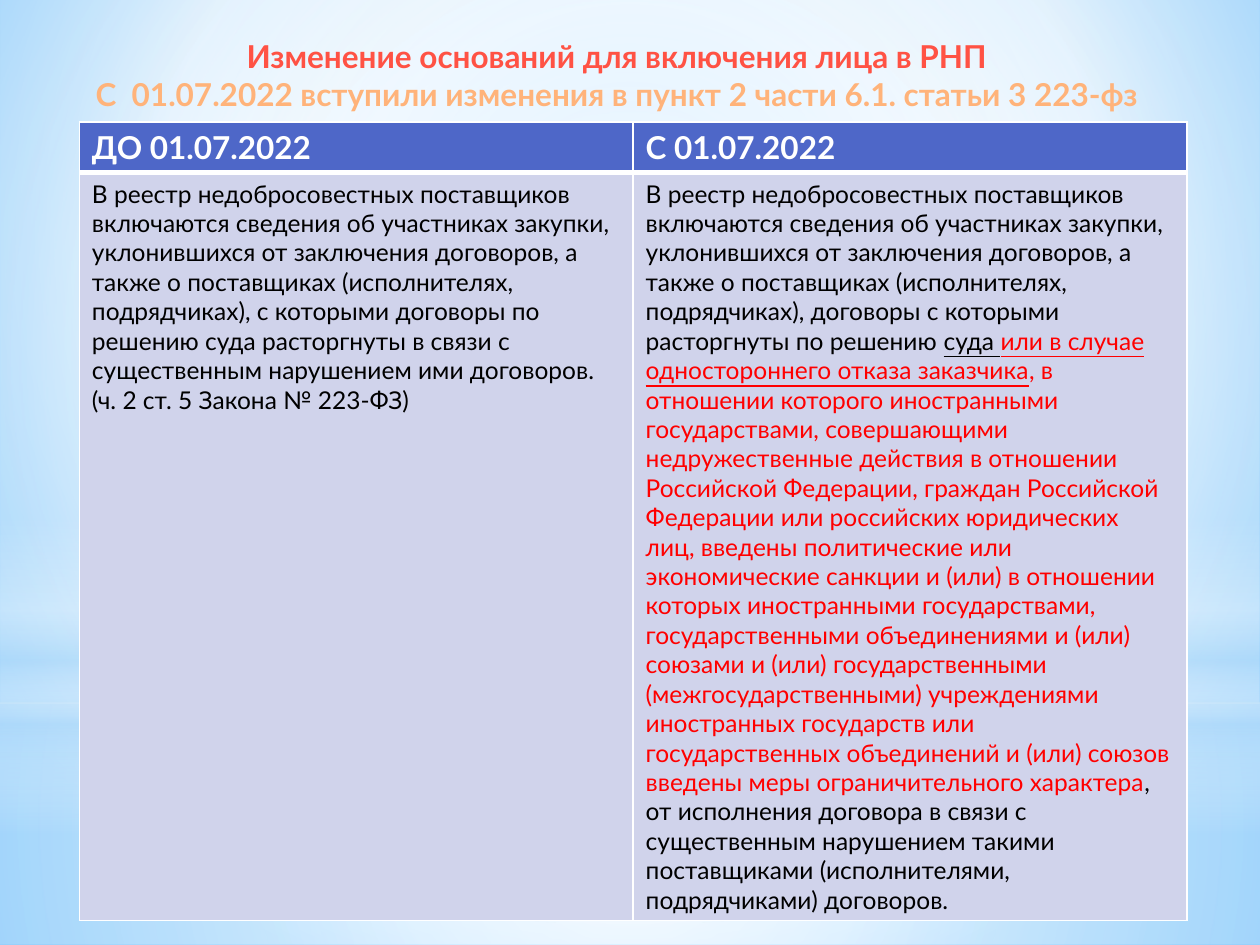
from dataclasses import dataclass

from pptx import Presentation, util as u
from pptx.dml.color import RGBColor
from pptx.enum import shapes, text
from pptx.oxml import parse_xml
from pptx.oxml.ns import nsdecls, qn

WIDTH, HEIGHT = u.Inches(10), u.Inches(7.5)
CENTRE = (50, 50, 50, 50)


@dataclass(frozen=True)
class Theme:
    """Colours and type sizes of the slide."""
    font: str = "Lato"
    heading: int = 18
    body: int = 14
    white: str = "FFFFFF"
    black: str = "000000"
    mist: str = "B4DCFA"
    header: str = "4E67C8"
    cell: str = "D0D3EB"
    change: str = "FF0000"
    subtitle: str = "FFB37A"
    title_stops: tuple = ((0, "8A1300"), (78, "FF5244"), (100, "FFF0F0"))
    sky_stops: tuple = ((0, "9ED5FF"), (60, "FFFFFF"), (100, "5BB9FF"))


THEME = Theme()

BEFORE = [(
    "В реестр недобросовестных поставщиков включаются сведения об участниках закупки, "
    "уклонившихся от заключения договоров, а также о поставщиках (исполнителях, подрядчиках), "
    "с которыми договоры по решению суда расторгнуты в связи с существенным нарушением ими "
    "договоров. (ч. 2 ст. 5 Закона № 223-ФЗ)", THEME.black, False)]
AFTER = [
    ("В реестр недобросовестных поставщиков включаются сведения об участниках закупки, "
     "уклонившихся от заключения договоров, а также о поставщиках (исполнителях, подрядчиках), "
     "договоры с которыми расторгнуты по решению ", THEME.black, False),
    ("суда ", THEME.black, True),
    ("или в случае одностороннего отказа заказчика", THEME.change, True),
    (", в отношении которого иностранными государствами, совершающими недружественные действия "
     "в отношении Российской Федерации, граждан Российской Федерации или российских юридических "
     "лиц, введены политические или экономические санкции и (или) в отношении которых "
     "иностранными государствами, государственными объединениями и (или) союзами и (или) "
     "государственными (межгосударственными) учреждениями иностранных государств или "
     "государственных объединений и (или) союзов введены меры ограничительного характера",
     THEME.change, False),
    (", от исполнения договора в связи с существенным нарушением такими поставщиками "
     "(исполнителями, подрядчиками) договоров.", THEME.black, False),
]


def area(left, top, width, height):
    """Turn percentages of the slide into a position and a size."""
    return (int(WIDTH * left / 100), int(HEIGHT * top / 100),
            int(WIDTH * width / 100), int(HEIGHT * height / 100))


def paint_gradient(owner, stops, focus=None):
    """Replace the solid fill of an element by a radial or downward gradient."""
    marks = "".join(
        f'<a:gs pos="{place * 1000}"><a:srgbClr val="{colour}">'
        f'<a:alpha val="{(opacity[0] if opacity else 100) * 1000}"/></a:srgbClr></a:gs>'
        for place, colour, *opacity in stops)
    if focus:
        edges = " ".join(f'{side}="{share * 1000}"' for side, share in zip("ltrb", focus))
        course = f'<a:path path="circle"><a:fillToRect {edges}/></a:path>'
    else:
        course = '<a:lin ang="5400000" scaled="0"/>'
    gradient = parse_xml(f'<a:gradFill {nsdecls("a")} rotWithShape="1">'
                         f'<a:gsLst>{marks}</a:gsLst>{course}</a:gradFill>')
    owner.replace(owner.find(qn("a:solidFill")), gradient)


def add_glow(slide, kind, place, stops, focus=None):
    """Add a borderless translucent layer of the sky."""
    glow = slide.shapes.add_shape(kind, *area(*place))
    glow.shadow.inherit = False
    glow.line.fill.background()
    glow.fill.solid()
    paint_gradient(glow._element.spPr, stops, focus)


def add_sky(slide):
    """Paint the background and its layers of light."""
    white, mist = THEME.white, THEME.mist
    rectangle, oval = shapes.MSO_SHAPE.RECTANGLE, shapes.MSO_SHAPE.OVAL
    slide.background.fill.solid()
    paint_gradient(slide._element.cSld.bg.bgPr, THEME.sky_stops, (20, 10, 20, 60))
    add_glow(slide, rectangle, (0, 74.4, 100, 25.6),
             [(0, white, 91), (37, white, 76), (100, mist, 79)], CENTRE)
    add_glow(slide, rectangle, (0, 0, 100, 74.4),
             [(0, white, 89), (48, white, 62), (100, mist, 79)], CENTRE)
    add_glow(slide, rectangle, (0, 54.93, 100, 33.33),
             [(0, white, 0), (29, white, 30), (45, mist, 40),
              (55, white, 26), (65, mist, 60), (100, white, 0)])
    add_glow(slide, oval, (0, 23.33, 100, 74.4),
             [(0, white, 100), (56, white, 0)], CENTRE)


def style_run(run, size, colour, bold=False, underline=False):
    """Set the type of one run."""
    run.font.name, run.font.size = THEME.font, u.Pt(size)
    run.font.bold, run.font.underline = bold, underline
    run.font.color.rgb = RGBColor.from_string(colour)


def add_title(slide):
    """Fill the title placeholder and lift it above the sky."""
    title = slide.shapes.title
    slide.shapes._spTree.append(title._element)
    title.left, title.top, title.width, title.height = area(3.1, 3.2, 91.7, 9.47)
    frame = title.text_frame
    frame.text = ("Изменение оснований для включения лица в РНП\n"
                  "С  01.07.2022 вступили изменения в пункт 2 части 6.1. статьи 3 223-фз")
    frame.word_wrap = False
    frame.auto_size = text.MSO_AUTO_SIZE.SHAPE_TO_FIT_TEXT
    for line in frame.paragraphs:
        line.alignment = text.PP_ALIGN.CENTER
        style_run(line.runs[0], THEME.heading, THEME.subtitle, bold=True)
    paint_gradient(frame.paragraphs[0].runs[0].font._element, THEME.title_stops)


def border_cell(cell, top, bottom):
    """Draw white cell edges with the given top and bottom widths."""
    edges = (("L", 1), ("R", 1), ("T", top), ("B", bottom))
    for order, (side, points) in enumerate(edges):
        cell._tc.get_or_add_tcPr().insert(order, parse_xml(
            f'<a:ln{side} {nsdecls("a")} w="{u.Pt(points)}"><a:solidFill>'
            f'<a:srgbClr val="{THEME.white}"/></a:solidFill></a:ln{side}>'))


def fill_cell(cell, pieces, size, fill, bold=False):
    """Write styled pieces of text into a coloured cell."""
    cell.fill.solid()
    cell.fill.fore_color.rgb = RGBColor.from_string(fill)
    for wording, colour, underline in pieces:
        run = cell.text_frame.paragraphs[0].add_run()
        run.text = wording
        style_run(run, size, colour, bold, underline)


def add_comparison(slide):
    """Add the table of the rules before and after the change."""
    table = slide.shapes.add_table(2, 2, *area(6.3, 12.93, 87.9, 84.4)).table
    for row, share in zip(table.rows, (5.33, 79.07)):
        row.height = int(HEIGHT * share / 100)
    columns = (("ДО 01.07.2022", BEFORE), ("С 01.07.2022", AFTER))
    for column, (heading, rule) in enumerate(columns):
        header, body = table.cell(0, column), table.cell(1, column)
        fill_cell(header, [(heading, THEME.white, False)], THEME.heading, THEME.header, bold=True)
        fill_cell(body, rule, THEME.body, THEME.cell)
        border_cell(header, top=1, bottom=3)
        border_cell(body, top=3, bottom=1)


def main():
    """Build the slide and save it."""
    deck = Presentation()
    deck.slide_width, deck.slide_height = WIDTH, HEIGHT
    slide = deck.slides.add_slide(deck.slide_layouts.get_by_name("Title Only"))
    add_sky(slide)
    add_title(slide)
    add_comparison(slide)
    deck.save("out.pptx")


if __name__ == "__main__":
    main()
